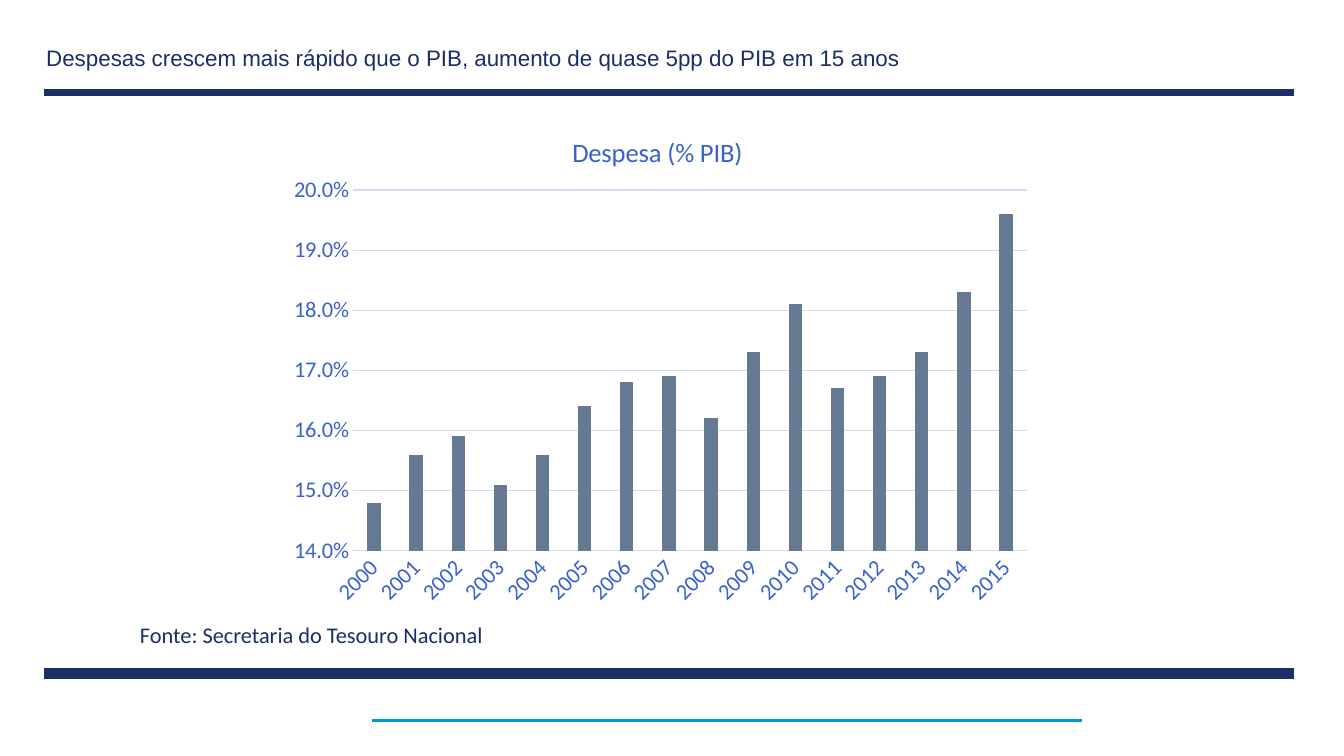
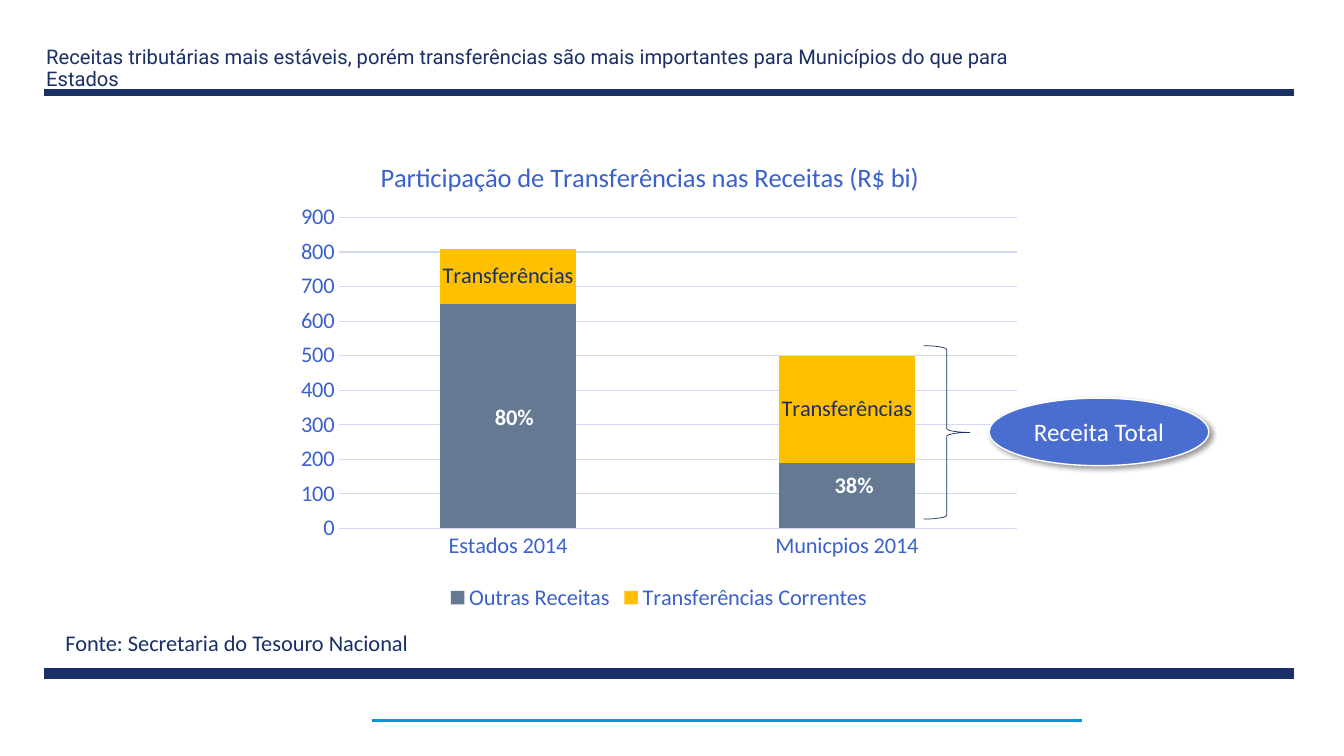
from lxml.etree import SubElement
from pptx import Presentation
from pptx.chart.data import CategoryChartData
from pptx.dml.color import RGBColor
from pptx.enum.chart import (XL_CHART_TYPE, XL_LABEL_POSITION,
                             XL_LEGEND_POSITION, XL_TICK_MARK)
from pptx.enum.shapes import MSO_CONNECTOR, MSO_SHAPE
from pptx.enum.text import MSO_ANCHOR, PP_ALIGN
from pptx.oxml.ns import qn
from pptx.util import Inches, Pt

INK = {
    "navy": "1B2F67",
    "sky": "0097D6",
    "blue": "3B61CC",
    "grid": "D2DBF3",
    "slate": "657992",
    "gold": "FFC000",
    "oval": "4A6DD0",
    "white": "FFFFFF",
    "black": "000000",
}
RULES = [
    (0.44, 12.83, 0.92, "navy", 5),
    (0.44, 12.83, 6.68, "navy", 8),
    (3.69, 10.73, 7.15, "sky", 2),
]
SOURCE = "Fonte: Secretaria do Tesouro Nacional"


def color(name):
    return RGBColor.from_string(INK[name])


def style(font, size, ink, face="Calibri", bold=False):
    font.size = Pt(size)
    font.name = face
    font.bold = bold
    font.color.rgb = color(ink)


def stroke(line, ink, width):
    line.color.rgb = color(ink)
    line.width = Pt(width)


def place(node, spot, inner=False):
    tag = qn("c:layout")
    frame = node.find(tag)
    if frame is None:
        frame = node.makeelement(tag)
        text = node.find(qn("c:tx"))
        node.insert(0 if text is None else 1, frame)
    box = SubElement(frame, qn("c:manualLayout"))
    parts = [("layoutTarget", "inner")] if inner else []
    parts += [("xMode", "edge"), ("yMode", "edge")]
    parts += zip("xywh", spot)
    for key, value in parts:
        SubElement(box, qn(f"c:{key}")).set("val", str(value))


class Deck:
    def __init__(self):
        self.show = Presentation()
        self.show.slide_width = Inches(13.33)
        self.show.slide_height = Inches(7.5)
        self.slide = None

    def page(self, title, width, size, face):
        self.slide = self.show.slides.add_slide(self.show.slide_layouts[6])
        for left, right, top, ink, thick in RULES:
            self.rule(left, right, top, ink, thick)
        para = self.text(title, 0.36, 0.42, width, 0.31, size, face=face)
        para.line_spacing = 0.9

    def rule(self, left, right, top, ink, thick):
        line = self.slide.shapes.add_connector(
            MSO_CONNECTOR.STRAIGHT, Inches(left), Inches(top),
            Inches(right), Inches(top))
        stroke(line.line, ink, thick)
        SubElement(line._element.spPr, qn("a:effectLst"))

    def text(self, words, left, top, width, height, size=16, ink="navy",
             face="Calibri", bold=False, wrap=True):
        box = self.slide.shapes.add_textbox(
            Inches(left), Inches(top), Inches(width), Inches(height))
        box.text_frame.word_wrap = wrap
        para = box.text_frame.paragraphs[0]
        para.text = words
        style(para.font, size, ink, face, bold)
        return para

    def shape(self, kind, left, top, width, height, ink, thick, fill=None):
        item = self.slide.shapes.add_shape(
            kind, Inches(left), Inches(top), Inches(width), Inches(height))
        item.shadow.inherit = False
        stroke(item.line, ink, thick)
        if fill:
            item.fill.solid()
            item.fill.fore_color.rgb = color(fill)
        else:
            item.fill.background()
        return item

    def oval(self, words, left, top, width, height):
        item = self.shape(MSO_SHAPE.OVAL, left, top, width, height,
                          "white", 1, "oval")
        effect = item._element.spPr.find(qn("a:effectLst"))
        shade = SubElement(effect, qn("a:outerShdw"), blurRad=str(Pt(4)),
                           dist=str(Pt(3)), dir=str(45 * 60000))
        tone = SubElement(shade, qn("a:srgbClr"), val=INK["black"])
        SubElement(tone, qn("a:alpha"), val="40000")
        item.text_frame.vertical_anchor = MSO_ANCHOR.MIDDLE
        para = item.text_frame.paragraphs[0]
        para.text = words
        para.alignment = PP_ALIGN.CENTER
        style(para.font, 18, "white")

    def chart(self, kind, box, title, names, series, low, high, step, form,
              gap, lap, head, plot):
        data = CategoryChartData()
        data.categories = names
        for name, values, _ in series:
            data.add_series(name, values)
        chart = self.slide.shapes.add_chart(
            kind, *map(Inches, box), data).chart
        style(chart.font, 16, "navy")
        chart.has_legend = False
        chart.has_title = True
        para = chart.chart_title.text_frame.paragraphs[0]
        para.text = title
        style(para.font, 19, "blue")
        place(chart.chart_title._element, head)
        place(chart._chartSpace.chart.plotArea, plot, True)
        bars = chart.plots[0]
        bars.gap_width = gap
        bars.overlap = lap
        bars.vary_by_categories = False
        for item, (_, _, ink) in zip(bars.series, series):
            item.format.fill.solid()
            item.format.fill.fore_color.rgb = color(ink)
        for axis in (chart.category_axis, chart.value_axis):
            axis.major_tick_mark = XL_TICK_MARK.NONE
            axis.minor_tick_mark = XL_TICK_MARK.NONE
            style(axis.tick_labels.font, 16, "blue")
        stroke(chart.category_axis.format.line, "grid", 0.75)
        axis = chart.value_axis
        axis.format.line.fill.background()
        axis.minimum_scale = low
        axis.maximum_scale = high
        axis.major_unit = step
        axis.tick_labels.number_format = form
        axis.tick_labels.number_format_is_linked = False
        stroke(axis.major_gridlines.format.line, "grid", 0.75)
        return chart

    def slant(self, axis):
        body = axis._element.find(qn("c:txPr")).find(qn("a:bodyPr"))
        body.set("rot", str(-45 * 60000))

    def legend(self, chart):
        chart.has_legend = True
        chart.legend.position = XL_LEGEND_POSITION.BOTTOM
        chart.legend.include_in_layout = False
        style(chart.legend.font, 16, "blue")

    def label(self, point, words):
        mark = point.data_label
        run = mark.text_frame.paragraphs[0].add_run()
        run.text = words
        style(run.font, 16, "navy")
        mark.position = XL_LABEL_POSITION.CENTER


def main():
    deck = Deck()

    deck.page("Despesas crescem mais rápido que o PIB, aumento de quase 5pp "
              "do PIB em 15 anos", 9.39, 16, "Arial")
    spend = [0.148, 0.156, 0.159, 0.151, 0.156, 0.164, 0.168, 0.169,
             0.162, 0.173, 0.181, 0.167, 0.169, 0.173, 0.183, 0.196]
    chart = deck.chart(
        XL_CHART_TYPE.COLUMN_CLUSTERED, (2.74, 1.08, 7.6, 5.04),
        "Despesa (% PIB)", [str(year) for year in range(2000, 2016)],
        [("Despesa", spend, "slate")], 0.14, 0.2, 0.01, "0.0%",
        219, -27, (0.38, 0.04), (0.1, 0.16, 0.88, 0.71))
    deck.slant(chart.category_axis)
    deck.text(SOURCE, 1.29, 6.11, 9.26, 0.37)

    deck.page("Receitas tributárias mais estáveis, porém transferências são "
              "mais importantes para Municípios do que para Estados",
              9.87, 14.4, "Roboto")
    chart = deck.chart(
        XL_CHART_TYPE.COLUMN_STACKED, (2.84, 1.29, 7.39, 4.82),
        "Participação de Transferências nas Receitas (R$ bi)",
        ["Estados 2014", "Municpios 2014"],
        [("Outras Receitas", [650, 190], "slate"),
         ("Transferências Correntes", [160, 310], "gold")],
        0, 900, 100, "0", 150, 100, (0.12, 0.05), (0.07, 0.18, 0.91, 0.64))
    deck.legend(chart)
    for spot in range(2):
        deck.label(chart.plots[0].series[1].points[spot], "Transferências")
    deck.text(SOURCE, 0.55, 6.19, 9.26, 0.37)
    deck.shape(MSO_SHAPE.RIGHT_BRACE, 9.16, 3.43, 0.46, 1.72, "navy", 0.5)
    deck.oval("Receita Total", 9.81, 3.95, 2.18, 0.67)
    for share, left, top in (("80%", 4.81, 3.95), ("38%", 8.18, 4.62)):
        deck.text(share, left, top, 0.59, 0.37, ink="white", bold=True,
                  wrap=False)

    deck.show.save("out.pptx")


if __name__ == "__main__":
    main()
